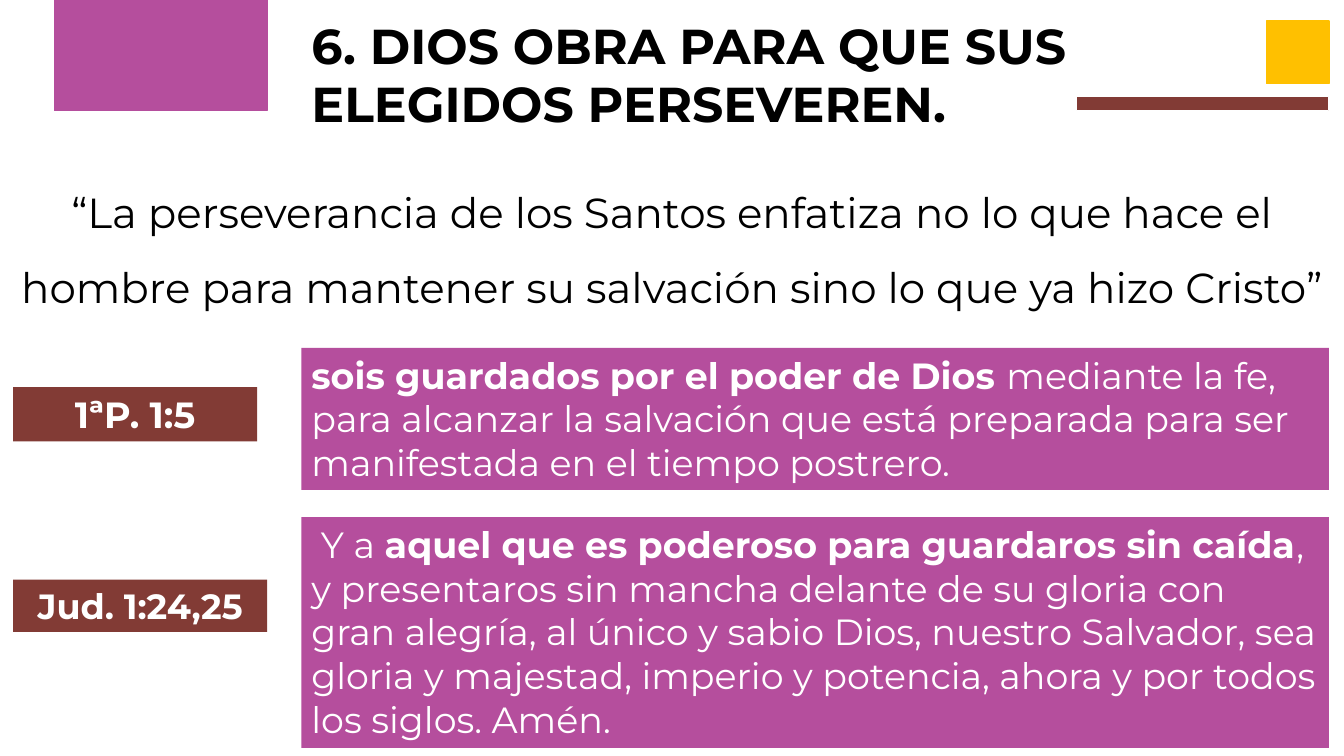
from pptx import Presentation
from pptx.dml.color import RGBColor
from pptx.enum.shapes import MSO_SHAPE
from pptx.enum.text import MSO_ANCHOR, MSO_AUTO_SIZE, PP_ALIGN
from pptx.util import Inches, Pt

PURPLE = RGBColor(0xB5, 0x4E, 0x9D)
BROWN = RGBColor(0x82, 0x3B, 0x35)
YELLOW = RGBColor(0xFF, 0xC0, 0x00)
WHITE = RGBColor(0xFF, 0xFF, 0xFF)
BLACK = RGBColor(0x00, 0x00, 0x00)
FONT = "Montserrat"

LABEL_LEFT = 0.13
VERSE_LEFT = 2.99
VERSE_WIDTH = 10.19


def write_text(frame, runs, size, color=WHITE, align=PP_ALIGN.LEFT, line_spacing=None):
    """Fill a frame with one paragraph of (text, bold) runs."""
    frame.word_wrap = True
    frame.auto_size = MSO_AUTO_SIZE.SHAPE_TO_FIT_TEXT
    frame.vertical_anchor = MSO_ANCHOR.TOP
    paragraph = frame.paragraphs[0]
    paragraph.alignment = align
    if line_spacing:
        paragraph.line_spacing = line_spacing
    for text, bold in runs:
        run = paragraph.add_run()
        run.text = text
        run.font.name = FONT
        run.font.size = Pt(size)
        run.font.bold = bold
        run.font.color.rgb = color


def add_block(slide, box, fill, line=None):
    block = slide.shapes.add_shape(MSO_SHAPE.RECTANGLE, *map(Inches, box))
    block.shadow.inherit = False
    block.fill.solid()
    block.fill.fore_color.rgb = fill
    if line is None:
        block.line.fill.background()
    else:
        block.line.color.rgb = line
        block.line.width = Pt(1)
    return block


def add_decoration(slide, width):
    """Coloured blocks along the top edge; the right ones end at width."""
    add_block(slide, (0.54, 0, 2.11, 1.1), PURPLE, PURPLE)
    add_block(slide, (width - 0.62, 0.21, 0.62, 0.62), YELLOW, YELLOW)
    add_block(slide, (width - 2.5, 0.96, 2.5, 0.14), BROWN, WHITE)


def add_statement(slide, box, text, size, bold=False, **text_format):
    statement = slide.shapes.add_textbox(*map(Inches, box))
    write_text(statement.text_frame, [(text, bold)], size, BLACK, **text_format)


def add_passage(slide, top, height, verse, reference, label_box, label_size):
    """Verse on the right; label_box gives offset from top, width and height."""
    offset, label_width, label_height = label_box
    label = add_block(slide, (LABEL_LEFT, top + offset, label_width, label_height), BROWN)
    write_text(label.text_frame, [(reference, True)], label_size, align=PP_ALIGN.CENTER)
    panel = add_block(slide, (VERSE_LEFT, top, VERSE_WIDTH, height), PURPLE)
    write_text(panel.text_frame, verse, 26)


def main():
    prs = Presentation()
    prs.slide_width, prs.slide_height = Inches(13.33), Inches(7.5)
    slide = prs.slides.add_slide(prs.slide_layouts[6])

    # Top decoration, title and quotation
    add_decoration(slide, VERSE_LEFT + VERSE_WIDTH)
    add_statement(slide, (VERSE_LEFT, 0.1, 9.81, 1.28),
                  "6. DIOS OBRA PARA QUE SUS ELEGIDOS PERSEVEREN.", 35, bold=True)
    add_statement(slide, (-0.1, 1.55, 13.53, 1.53),
                  "“La perseverancia de los Santos enfatiza no lo que hace el hombre "
                  "para mantener su salvación sino lo que ya hizo Cristo”",
                  30, align=PP_ALIGN.CENTER, line_spacing=1.5)

    # Bible passages with their references
    add_passage(slide, 3.45, 1.41, [
        ("sois guardados por el poder de Dios ", True),
        ("mediante la fe, para alcanzar la salvación que está preparada para ser "
         "manifestada en el tiempo postrero.", False),
    ], "1ªP. 1:5", (0.39, 2.42, 0.54), 26)
    add_passage(slide, 5.13, 2.29, [
        (" Y a ", False),
        ("aquel que es poderoso para guardaros sin caída", True),
        (", y presentaros sin mancha delante de su gloria con gran alegría, al único "
         "y sabio Dios, nuestro Salvador, sea gloria y majestad, imperio y potencia, "
         "ahora y por todos los siglos. Amén.", False),
    ], "Jud. 1:24,25", (0.62, 2.52, 0.52), 25)

    prs.save("out.pptx")


if __name__ == "__main__":
    main()
